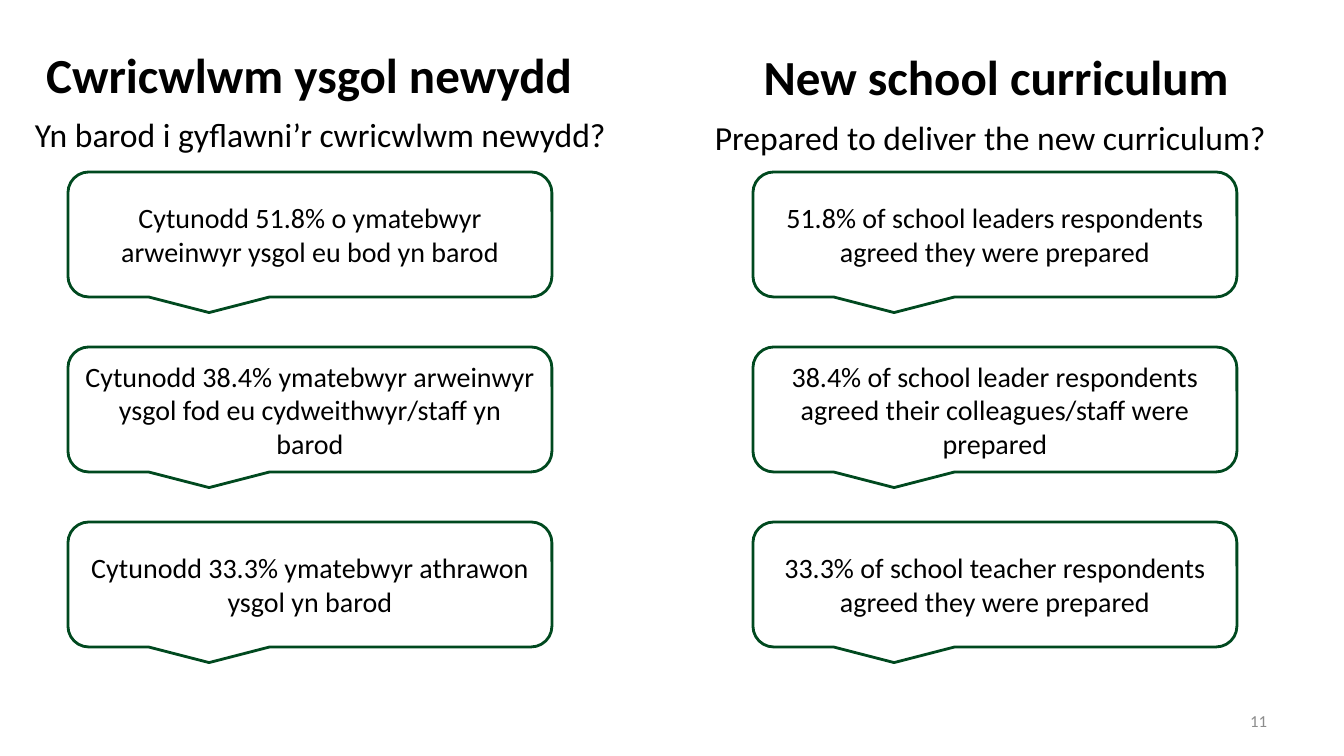
from pptx import Presentation
from pptx.dml.color import RGBColor
from pptx.enum.shapes import MSO_SHAPE
from pptx.enum.text import MSO_ANCHOR, MSO_AUTO_SIZE, PP_ALIGN
from pptx.util import Emu, Pt

EMU_PER_PX = 914400 / 100.8


def px(length):
    return Emu(round(length * EMU_PER_PX))


def color(value):
    return RGBColor.from_string(value)


class SlideBuilder:
    font = "Calibri"
    ink = "000000"
    outline = "00491F"
    muted = "8C8C8C"

    def __init__(self, page):
        self.page = page

    def set_text(self, shape, text, size, align=PP_ALIGN.LEFT, bold=False,
                 anchor=MSO_ANCHOR.TOP, ink=None):
        frame = shape.text_frame
        frame.word_wrap = True
        frame.auto_size = MSO_AUTO_SIZE.NONE
        frame.vertical_anchor = anchor
        para = frame.paragraphs[0]
        para.text = text
        para.alignment = align
        para.font.name = self.font
        para.font.size = Pt(size)
        para.font.bold = bold
        para.font.color.rgb = color(ink or self.ink)

    def title(self, left, top, width, height, text):
        box = self.page.shapes.title
        box.left, box.top, box.width, box.height = map(px, (left, top, width, height))
        self.set_text(box, text, 35, bold=True)

    def text(self, left, top, width, height, text, size, **style):
        box = self.page.shapes.add_textbox(*map(px, (left, top, width, height)))
        self.set_text(box, text, size, **style)

    def callout(self, left, top, width, height, text):
        bubble = self.page.shapes.add_shape(
            MSO_SHAPE.ROUNDED_RECTANGULAR_CALLOUT, *map(px, (left, top, width, height)))
        bubble.shadow.inherit = False
        bubble.fill.background()
        bubble.line.color.rgb = color(self.outline)
        bubble.line.width = Pt(2)
        self.set_text(bubble, text, 20, align=PP_ALIGN.CENTER, anchor=MSO_ANCHOR.MIDDLE)


def main():
    deck = Presentation()
    deck.slide_width, deck.slide_height = px(1344), px(756)
    page = deck.slides.add_slide(deck.slide_layouts[5])
    builder = SlideBuilder(page)

    # Headings and questions in both languages
    builder.title(36, 39, 548, 70, "Cwricwlwm ysgol newydd")
    builder.text(745, 42, 503, 70, "New school curriculum", 35,
                 align=PP_ALIGN.CENTER, bold=True)
    builder.text(25, 109, 659, 50, "Yn barod i gyflawni’r cwricwlwm newydd?", 24)
    builder.text(705, 112, 659, 50, "Prepared to deliver the new curriculum?", 24)

    # Survey findings, one column per language
    findings = {
        68: ["Cytunodd 51.8% o ymatebwyr arweinwyr ysgol eu bod yn barod",
             "Cytunodd 38.4% ymatebwyr arweinwyr ysgol fod eu cydweithwyr/staff yn barod",
             "Cytunodd 33.3% ymatebwyr athrawon ysgol yn barod"],
        753: ["51.8% of school leaders respondents agreed they were prepared",
              "38.4% of school leader respondents agreed their colleagues/staff were prepared",
              "33.3% of school teacher respondents agreed they were prepared"],
    }
    for left, column in findings.items():
        for row, finding in enumerate(column):
            builder.callout(left, 172 + 175 * row, 484, 125, finding)

    # Page number
    builder.text(964, 701, 313, 40, "11", 12, align=PP_ALIGN.RIGHT,
                 anchor=MSO_ANCHOR.MIDDLE, ink=builder.muted)

    deck.save("out.pptx")


if __name__ == "__main__":
    main()
